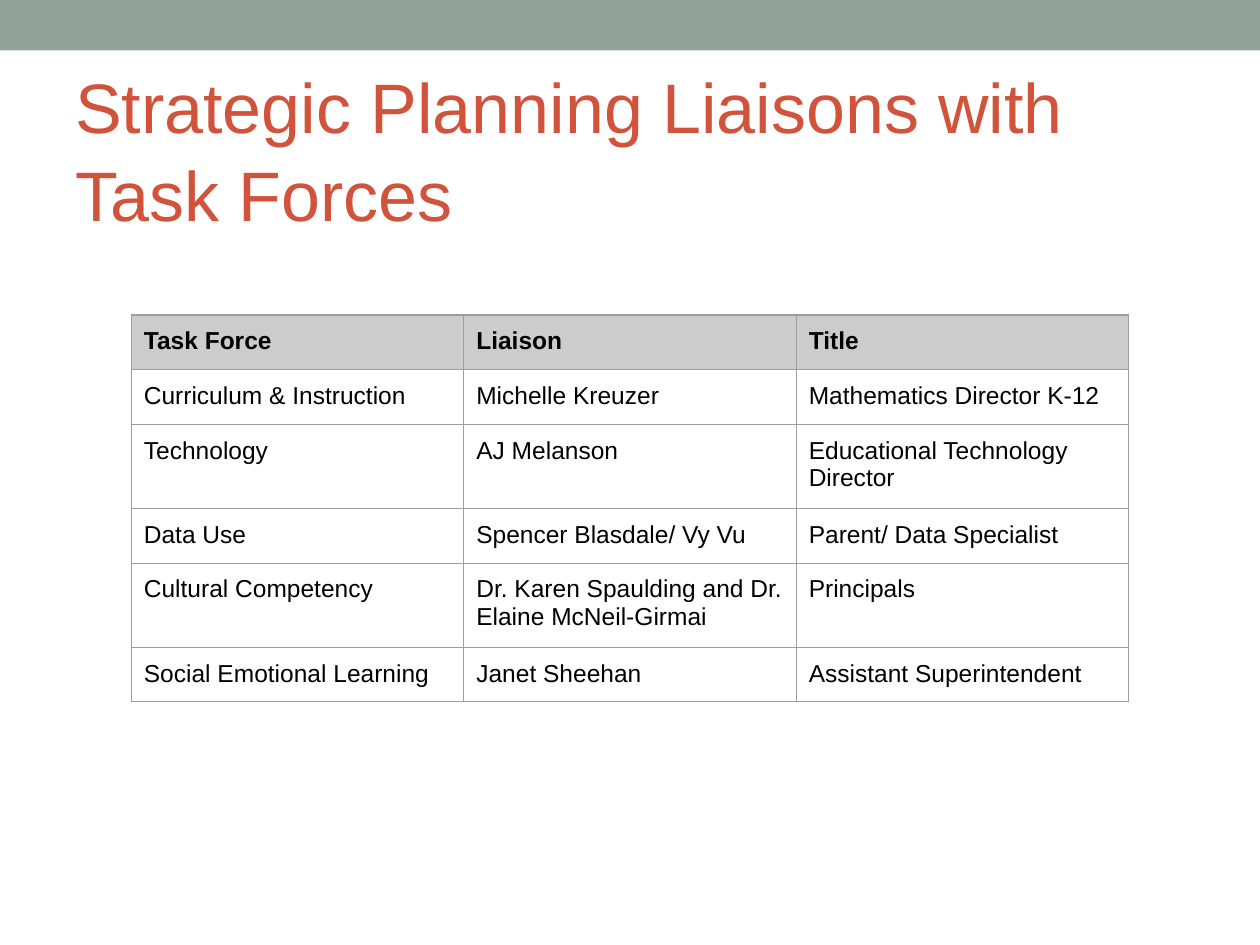
from dataclasses import dataclass

from lxml import etree
from pptx import Presentation
from pptx.dml.color import RGBColor
from pptx.enum.shapes import MSO_SHAPE
from pptx.enum.text import MSO_ANCHOR
from pptx.oxml.ns import qn
from pptx.slide import Slide
from pptx.table import _Cell
from pptx.text.text import TextFrame
from pptx.util import Pt

RECTANGLE = MSO_SHAPE.RECTANGLE
MIDDLE = MSO_ANCHOR.MIDDLE
BLANK_LAYOUT = 6

SAGE = RGBColor(0x93, 0xA2, 0x99)
BRICK = RGBColor(0xD2, 0x53, 0x3C)
BLACK = RGBColor(0x00, 0x00, 0x00)
HEADER_GRAY = RGBColor(0xCC, 0xCC, 0xCC)
BORDER_GRAY = RGBColor(0x9E, 0x9E, 0x9E)

FONT = "Arial"
INSET = Pt(7.2)
BORDER_WIDTH = Pt(0.75)
BORDER_SIDES = ("a:lnL", "a:lnR", "a:lnT", "a:lnB")
SLIDE_WIDTH = Pt(720)
SLIDE_HEIGHT = Pt(540)
COLUMN_WIDTH = Pt(190)
ROW_HEIGHT = Pt(30.3)
TABLE_TOP = Pt(180)


@dataclass(frozen=True)
class Assignment:
    task_force: str
    liaison: str
    title: str


HEADER = Assignment("Task Force", "Liaison", "Title")
ASSIGNMENTS = [
    Assignment("Curriculum & Instruction", "Michelle Kreuzer", "Mathematics Director K-12"),
    Assignment("Technology", "AJ Melanson", "Educational Technology Director"),
    Assignment("Data Use", "Spencer Blasdale/ Vy Vu", "Parent/ Data Specialist"),
    Assignment("Cultural Competency", "Dr. Karen Spaulding and Dr. Elaine McNeil-Girmai", "Principals"),
    Assignment("Social Emotional Learning", "Janet Sheehan", "Assistant Superintendent"),
]


def write_text(frame: TextFrame, text: str, size: float, color: RGBColor, bold: bool = False) -> None:
    paragraph = frame.paragraphs[0]
    paragraph.text = text
    paragraph.font.name = FONT
    paragraph.font.size = Pt(size)
    paragraph.font.bold = bold
    paragraph.font.color.rgb = color


def set_insets(target: TextFrame | _Cell) -> None:
    target.margin_left = target.margin_right = INSET
    target.margin_top = target.margin_bottom = INSET


def draw_banner(slide: Slide) -> None:
    banner = slide.shapes.add_shape(RECTANGLE, Pt(0), Pt(0), SLIDE_WIDTH, Pt(28.8))
    banner.shadow.inherit = False
    banner.fill.solid()
    banner.fill.fore_color.rgb = SAGE
    banner.line.fill.background()


def draw_title(slide: Slide, text: str) -> None:
    frame = slide.shapes.add_textbox(Pt(36), Pt(42), Pt(648), Pt(84)).text_frame
    frame.word_wrap = True
    frame.vertical_anchor = MIDDLE
    set_insets(frame)
    write_text(frame, text, 40, BRICK)
    frame.paragraphs[0].line_spacing = 1.05


def draw_borders(cell: _Cell) -> None:
    properties = cell._tc.get_or_add_tcPr()
    for side in BORDER_SIDES:
        line = etree.SubElement(properties, qn(side), w=str(BORDER_WIDTH))
        fill = etree.SubElement(line, qn("a:solidFill"))
        etree.SubElement(fill, qn("a:srgbClr"), val=str(BORDER_GRAY))


def draw_cell(cell: _Cell, text: str, is_header: bool) -> None:
    set_insets(cell)
    draw_borders(cell)
    if is_header:
        cell.fill.solid()
        cell.fill.fore_color.rgb = HEADER_GRAY
    else:
        cell.fill.background()
    write_text(cell.text_frame, text, 14, BLACK, bold=is_header)


def draw_table(slide: Slide, assignments: list[Assignment]) -> None:
    rows = [HEADER, *assignments]
    width = COLUMN_WIDTH * 3
    left = (SLIDE_WIDTH - width) // 2
    table = slide.shapes.add_table(len(rows), 3, left, TABLE_TOP, width, ROW_HEIGHT * len(rows)).table
    table.horz_banding = False
    for row_index, row in enumerate(rows):
        for column_index, text in enumerate((row.task_force, row.liaison, row.title)):
            draw_cell(table.cell(row_index, column_index), text, row is HEADER)


def main() -> None:
    presentation = Presentation()
    presentation.slide_width = SLIDE_WIDTH
    presentation.slide_height = SLIDE_HEIGHT
    slide = presentation.slides.add_slide(presentation.slide_layouts[BLANK_LAYOUT])
    draw_banner(slide)
    draw_title(slide, "Strategic Planning Liaisons with Task Forces")
    draw_table(slide, ASSIGNMENTS)
    presentation.save("out.pptx")


if __name__ == "__main__":
    main()
